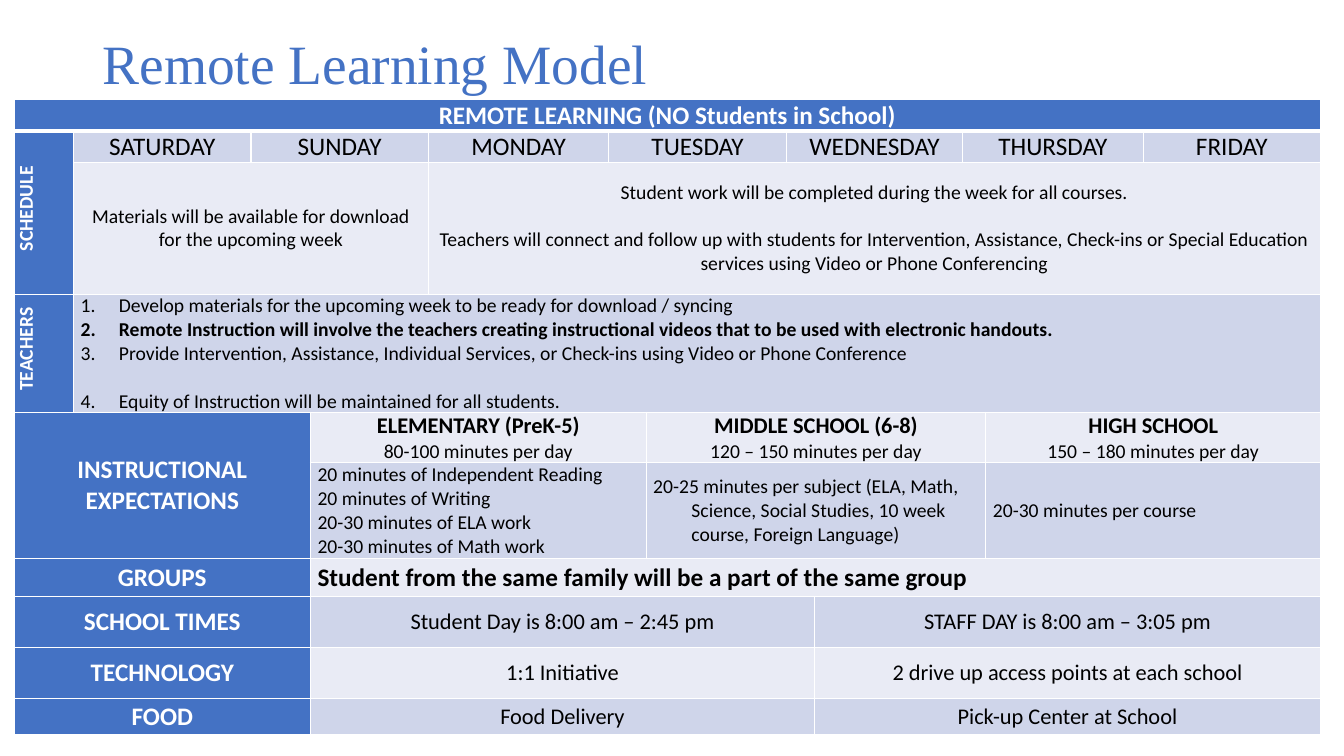
from dataclasses import dataclass

from lxml.etree import SubElement
from pptx import Presentation
from pptx.dml.color import RGBColor
from pptx.enum.text import MSO_ANCHOR, PP_ALIGN
from pptx.oxml.ns import qn
from pptx.util import Inches, Pt

COLORS = {"blue": "4472C4", "mid": "CFD5EA", "pale": "E9EBF5", "white": "FFFFFF", "black": "000000"}
COLUMNS = [0.59, 1.76, 0.59, 1.17, 1.79, 0.37, 1.39, 0.28, 1.47, 0.23, 1.56, 1.76]
ROWS = [0.31, 0.31, 1.31, 1.17, 0.5, 0.95, 0.38, 0.5, 0.51, 0.36]
DAYS = {"SATURDAY": (1, 1), "SUNDAY": (2, 3), "MONDAY": (4, 4), "TUESDAY": (5, 6),
        "WEDNESDAY": (7, 8), "THURSDAY": (9, 10), "FRIDAY": (11, 11)}
LEVELS = [
    (3, 5, "ELEMENTARY (PreK-5)", "80-100 minutes per day",
     ["20 minutes of Independent Reading", "20 minutes of Writing",
      "20-30 minutes of ELA work", "20-30 minutes of Math work"]),
    (6, 9, "MIDDLE SCHOOL (6-8)", "120 – 150 minutes per day",
     ["20-25 minutes per subject (ELA, Math, Science, Social Studies, 10 week course, Foreign Language)"]),
    (10, 11, "HIGH SCHOOL", "150 – 180 minutes per day", ["20-30 minutes per course"]),
]
LOGISTICS = [
    ("SCHOOL TIMES", "Student Day is 8:00 am – 2:45 pm", "STAFF DAY is 8:00 am – 3:05 pm", "mid"),
    ("TECHNOLOGY", "1:1 Initiative", "2 drive up access points at each school", "pale"),
    ("FOOD", "Food Delivery", "Pick-up Center at School", "mid"),
]


@dataclass
class Line:
    text: str
    size: int = 14
    bold: bool = False
    gap: int = 0


def style_font(font, name, size, color, bold=False):
    font.name = name
    font.size = Pt(size)
    font.bold = bold
    font.color.rgb = RGBColor.from_string(COLORS[color])


def add_title(slide, text):
    title = slide.shapes.add_textbox(Inches(0.92), Inches(0.4), Inches(11.5), Inches(0.53))
    frame = title.text_frame
    frame.word_wrap = True
    frame.vertical_anchor = MSO_ANCHOR.MIDDLE
    heading = frame.paragraphs[0]
    heading.text = text
    heading.line_spacing = 0.9
    style_font(heading.font, "Times New Roman", 39.6, "blue")


def add_grid(slide):
    frame = slide.shapes.add_table(len(ROWS), len(COLUMNS), Inches(0.14), Inches(0.99),
                                   Inches(sum(COLUMNS)), Inches(sum(ROWS)))
    grid = frame.table
    grid.horz_banding = False
    for column, width in zip(grid.columns, COLUMNS):
        column.width = Inches(width)
    for row, height in zip(grid.rows, ROWS):
        row.height = Inches(height)
    for cell in grid.iter_cells():
        cell.margin_left = cell.margin_right = Inches(0.07)
        cell.margin_top = cell.margin_bottom = 0
    return grid


def set_borders(cell, bottom):
    properties = cell._tc.get_or_add_tcPr()
    for position, (side, width) in enumerate({"L": 1, "R": 1, "T": 1, "B": bottom}.items()):
        border = SubElement(properties, qn(f"a:ln{side}"), w=str(Pt(width)))
        SubElement(SubElement(border, qn("a:solidFill")), qn("a:srgbClr"), val=COLORS["white"])
        properties.insert(position, border)


def fill_block(grid, rows, columns, lines, fill, color="black", align=PP_ALIGN.CENTER,
               hanging=False, numbered=False, bottom=1):
    cell = grid.cell(rows[0], columns[0])
    if rows[0] != rows[1] or columns[0] != columns[1]:
        cell.merge(grid.cell(rows[1], columns[1]))
    cell.fill.solid()
    cell.fill.fore_color.rgb = RGBColor.from_string(COLORS[fill])
    cell.vertical_anchor = MSO_ANCHOR.MIDDLE
    set_borders(cell, bottom)
    frame = cell.text_frame
    for number, line in enumerate(lines):
        paragraph = frame.add_paragraph() if number else frame.paragraphs[0]
        paragraph.text = line.text
        paragraph.alignment = align
        paragraph.space_before = Pt(line.gap)
        style_font(paragraph.font, "Calibri", line.size, color, line.bold)
        properties = paragraph._p.get_or_add_pPr()
        if hanging:
            properties.set("marL", str(Inches(0.38)))
            properties.set("indent", str(-Inches(0.38)))
        if numbered:
            numbering = SubElement(properties, qn("a:buAutoNum"), type="arabicPeriod")
            properties.find(qn("a:defRPr")).addprevious(numbering)
    return cell


def add_label(grid, rows, columns, text, bottom=1):
    fill_block(grid, rows, columns, [Line(text, 18, True)], "blue", "white", bottom=bottom)


def add_side_label(grid, rows, text):
    cell = fill_block(grid, rows, (0, 0), [Line(text, 14, True)], "blue", "white")
    cell._tc.get_or_add_tcPr().set("vert", "vert270")
    cell.text_frame.paragraphs[0]._p.get_or_add_pPr().set("marL", str(Inches(0.08)))


def add_schedule(grid):
    add_label(grid, (0, 0), (0, 11), "REMOTE LEARNING (NO Students in School)", bottom=3)
    add_side_label(grid, (1, 2), "SCHEDULE")
    for day, columns in DAYS.items():
        fill_block(grid, (1, 1), columns, [Line(day, 18)], "mid")
    fill_block(grid, (2, 2), (1, 3),
               [Line("Materials will be available for download for the upcoming week")], "pale")
    fill_block(grid, (2, 2), (4, 11), [
        Line("Student work will be completed during the week for all courses."),
        Line("Teachers will connect and follow up with students for Intervention, Assistance, "
             "Check-ins or Special Education services using Video or Phone Conferencing", gap=17),
    ], "pale")


def add_teachers(grid):
    add_side_label(grid, (3, 3), "TEACHERS")
    fill_block(grid, (3, 3), (1, 11), [
        Line("Develop materials for the upcoming week to be ready for download / syncing"),
        Line("Remote Instruction will involve the teachers creating instructional videos "
             "that to be used with electronic handouts.", bold=True),
        Line("Provide Intervention, Assistance, Individual Services, or Check-ins "
             "using Video or Phone Conference"),
        Line("Equity of Instruction will be maintained for all students.", gap=17),
    ], "mid", align=PP_ALIGN.LEFT, hanging=True, numbered=True)


def add_expectations(grid):
    add_label(grid, (4, 5), (0, 2), "INSTRUCTIONAL EXPECTATIONS")
    for first, last, level, minutes, tasks in LEVELS:
        fill_block(grid, (4, 4), (first, last), [Line(level, 16, True), Line(minutes)], "pale")
        fill_block(grid, (5, 5), (first, last), [Line(task) for task in tasks], "mid",
                   align=PP_ALIGN.LEFT, hanging=True)


def add_logistics(grid):
    add_label(grid, (6, 6), (0, 2), "GROUPS")
    fill_block(grid, (6, 6), (3, 11),
               [Line("Student from the same family will be a part of the same group", 18, True)],
               "pale", align=PP_ALIGN.LEFT)
    for row, (label, students, staff, fill) in enumerate(LOGISTICS, start=7):
        add_label(grid, (row, row), (0, 2), label)
        fill_block(grid, (row, row), (3, 7), [Line(students, 16)], fill)
        fill_block(grid, (row, row), (8, 11), [Line(staff, 16)], fill)


def main():
    deck = Presentation()
    deck.slide_width = Inches(13.33)
    deck.slide_height = Inches(7.5)
    slide = deck.slides.add_slide(deck.slide_layouts[6])
    add_title(slide, "Remote Learning Model")
    grid = add_grid(slide)
    add_schedule(grid)
    add_teachers(grid)
    add_expectations(grid)
    add_logistics(grid)
    deck.save("out.pptx")


if __name__ == "__main__":
    main()
